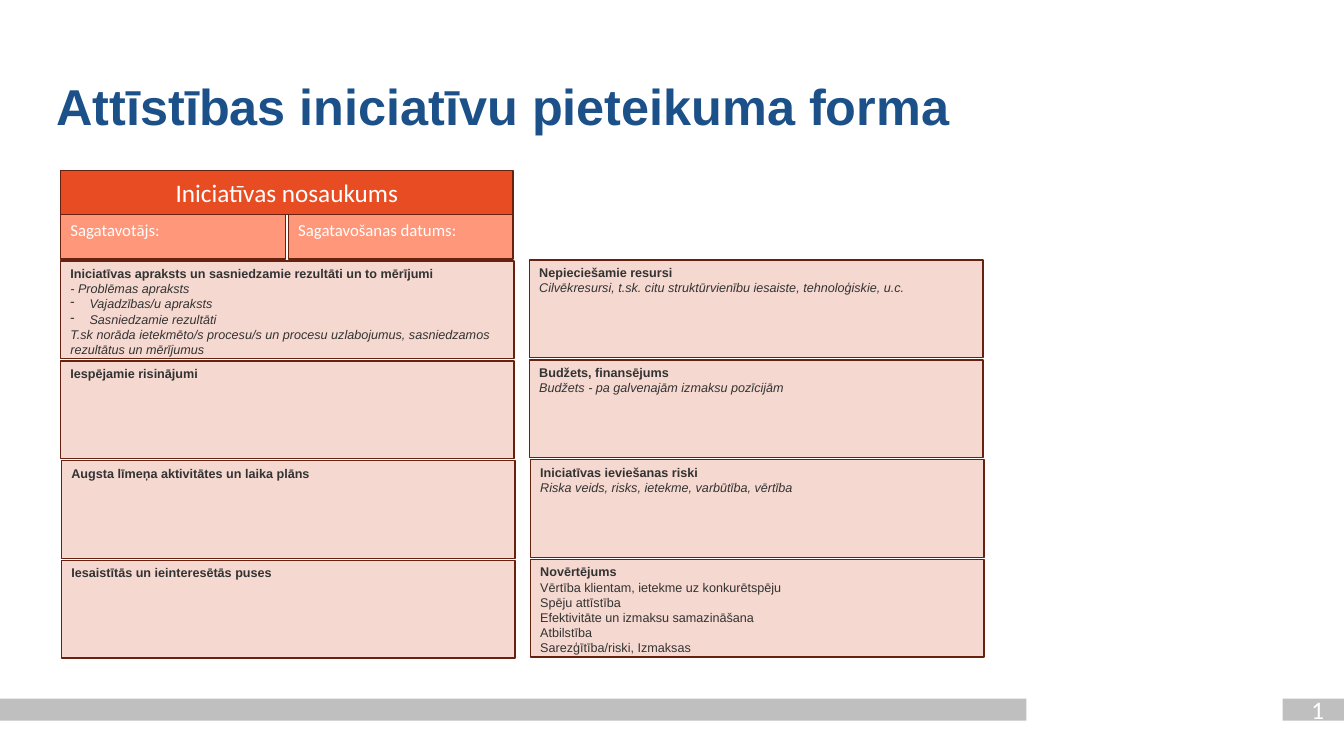
from dataclasses import dataclass

from lxml.etree import SubElement
from pptx import Presentation
from pptx.dml.color import RGBColor as RGB
from pptx.enum.shapes import MSO_SHAPE as SHAPE
from pptx.enum.text import MSO_ANCHOR as ANCHOR, PP_ALIGN as ALIGN
from pptx.oxml.ns import qn
from pptx.util import Inches, Pt


@dataclass(frozen=True)
class Theme:
    title: str = "1B5089"
    header: str = "E84C22"
    subheader: str = "FF977A"
    panel: str = "F5D8CF"
    border: str = "66210F"
    bar: str = "BFBFBF"
    text: str = "333333"
    white: str = "FFFFFF"
    title_size: int = 36
    header_size: int = 18
    label_size: int = 12
    body_size: int = 9
    sans: str = "Arial"
    display: str = "Calibri"


T = Theme()
TITLE = dict(name=T.sans, size=T.title_size, color=T.title, bold=True)
HEADER = dict(name=T.display, size=T.header_size, color=T.white)
LABEL = dict(name=T.display, size=T.label_size, color=T.white)
BODY = dict(name=T.sans, size=T.body_size, color=T.text)
STYLES = {
    "head": BODY | dict(bold=True),
    "plain": BODY,
    "note": BODY | dict(italic=True),
    "dash": BODY | dict(italic=True),
}

LEFT_PANELS = [
    [("head", "Iniciatīvas apraksts un sasniedzamie rezultāti un to mērījumi"),
     ("note", "- Problēmas apraksts"),
     ("dash", "Vajadzības/u apraksts"),
     ("dash", "Sasniedzamie rezultāti"),
     ("note", "T.sk norāda ietekmēto/s procesu/s un procesu uzlabojumus, "
              "sasniedzamos rezultātus un mērījumus")],
    [("head", "Iespējamie risinājumi")],
    [("head", "Augsta līmeņa aktivitātes un laika plāns")],
    [("head", "Iesaistītās un ieinteresētās puses")],
]
RIGHT_PANELS = [
    [("head", "Nepieciešamie resursi"),
     ("note", "Cilvēkresursi, t.sk. citu struktūrvienību iesaiste, tehnoloģiskie, u.c.")],
    [("head", "Budžets, finansējums"),
     ("note", "Budžets - pa galvenajām izmaksu pozīcijām")],
    [("head", "Iniciatīvas ieviešanas riski"),
     ("note", "Riska veids, risks, ietekme, varbūtība, vērtība")],
    [("head", "Novērtējums"),
     ("plain", "Vērtība klientam, ietekme uz konkurētspēju"),
     ("plain", "Spēju attīstība"),
     ("plain", "Efektivitāte un izmaksu samazināšana"),
     ("plain", "Atbilstība"),
     ("plain", "Sarezģītība/riski, Izmaksas")],
]


def style_font(font, style):
    for key, value in style.items():
        if key == "color":
            font.color.rgb = RGB.from_string(value)
        else:
            setattr(font, key, Pt(value) if key == "size" else value)


def add_text(p, text, style, align=ALIGN.LEFT):
    p.alignment = align
    r = p.add_run()
    r.text = text
    style_font(r.font, style)
    return r


def add_dash(p):
    pPr = p._p.get_or_add_pPr()
    pPr.set("marL", str(Inches(0.19)))
    pPr.set("indent", str(Inches(-0.19)))
    SubElement(pPr, qn("a:buChar"), char="-")


def add_box(slide, x, y, w, h, fill, border=None):
    sp = slide.shapes.add_shape(SHAPE.RECTANGLE, *map(Inches, (x, y, w, h)))
    sp.shadow.inherit = False
    sp.fill.solid()
    sp.fill.fore_color.rgb = RGB.from_string(fill)
    if border:
        sp.line.color.rgb = RGB.from_string(border)
        sp.line.width = Pt(1)
    else:
        sp.line.fill.background()
    sp.text_frame.word_wrap = True
    sp.text_frame.vertical_anchor = ANCHOR.TOP
    return sp


def add_title(slide, x, y, w, h, text):
    sp = slide.shapes.title
    sp.left, sp.top, sp.width, sp.height = map(Inches, (x, y, w, h))
    tf = sp.text_frame
    tf.vertical_anchor = ANCHOR.MIDDLE
    add_text(tf.paragraphs[0], text, TITLE)
    tf.paragraphs[0].line_spacing = 0.9


def add_header(slide, x, y, w, h):
    row = h / 2
    tf = add_box(slide, x, y, w, row, T.header, T.border).text_frame
    tf.vertical_anchor = ANCHOR.MIDDLE
    add_text(tf.paragraphs[0], "Iniciatīvas nosaukums", HEADER, ALIGN.CENTER)
    cell = 2.23
    for left, text in ((x, "Sagatavotājs:"), (x + w - cell, "Sagatavošanas datums:")):
        tf = add_box(slide, left, y + row, cell, row, T.subheader, T.border).text_frame
        add_text(tf.paragraphs[0], text, LABEL)


def add_column(slide, x, y, w, h, panels):
    gap = 0.02
    panel_h = (h - gap * (len(panels) - 1)) / len(panels)
    for i, lines in enumerate(panels):
        shift = i // 2 * 0.01
        top = y + i * (panel_h + gap)
        tf = add_box(slide, x + shift, top, w, panel_h, T.panel, T.border).text_frame
        for j, (kind, text) in enumerate(lines):
            p = tf.add_paragraph() if j else tf.paragraphs[0]
            if kind == "dash":
                add_dash(p)
            add_text(p, text, STYLES[kind])


def add_footer(slide, x, y, w, h):
    number_w = 0.61
    add_box(slide, x, y, 10.18, h, T.bar)
    add_box(slide, x + w - number_w, y, number_w, h, T.bar)
    box = (x + w - number_w + 0.02, y - 0.09, 0.66, 0.36)
    tf = slide.shapes.add_textbox(*map(Inches, box)).text_frame
    tf.word_wrap = True
    p = tf.paragraphs[0]
    r = add_text(p, "1", HEADER, ALIGN.CENTER)
    fld = SubElement(p._p, qn("a:fld"), type="slidenum",
                     id="{B6F15528-21DE-4FAA-801E-634DDDAF4B2B}")
    fld.extend(list(r._r))
    p._p.remove(r._r)


def main():
    prs = Presentation()
    prs.slide_width, prs.slide_height = Inches(13.33), Inches(7.5)
    slide = prs.slides.add_slide(prs.slide_layouts[5])
    add_footer(slide, 0, 6.93, 13.33, 0.22)
    add_title(slide, 0.46, 0.48, 12.47, 1.2, "Attīstības iniciatīvu pieteikuma forma")
    add_header(slide, 0.6, 1.69, 4.49, 0.88)
    add_column(slide, 0.6, 2.59, 4.5, 3.94, LEFT_PANELS)
    add_column(slide, 5.25, 2.58, 4.5, 3.94, RIGHT_PANELS)
    prs.save("out.pptx")


if __name__ == "__main__":
    main()
